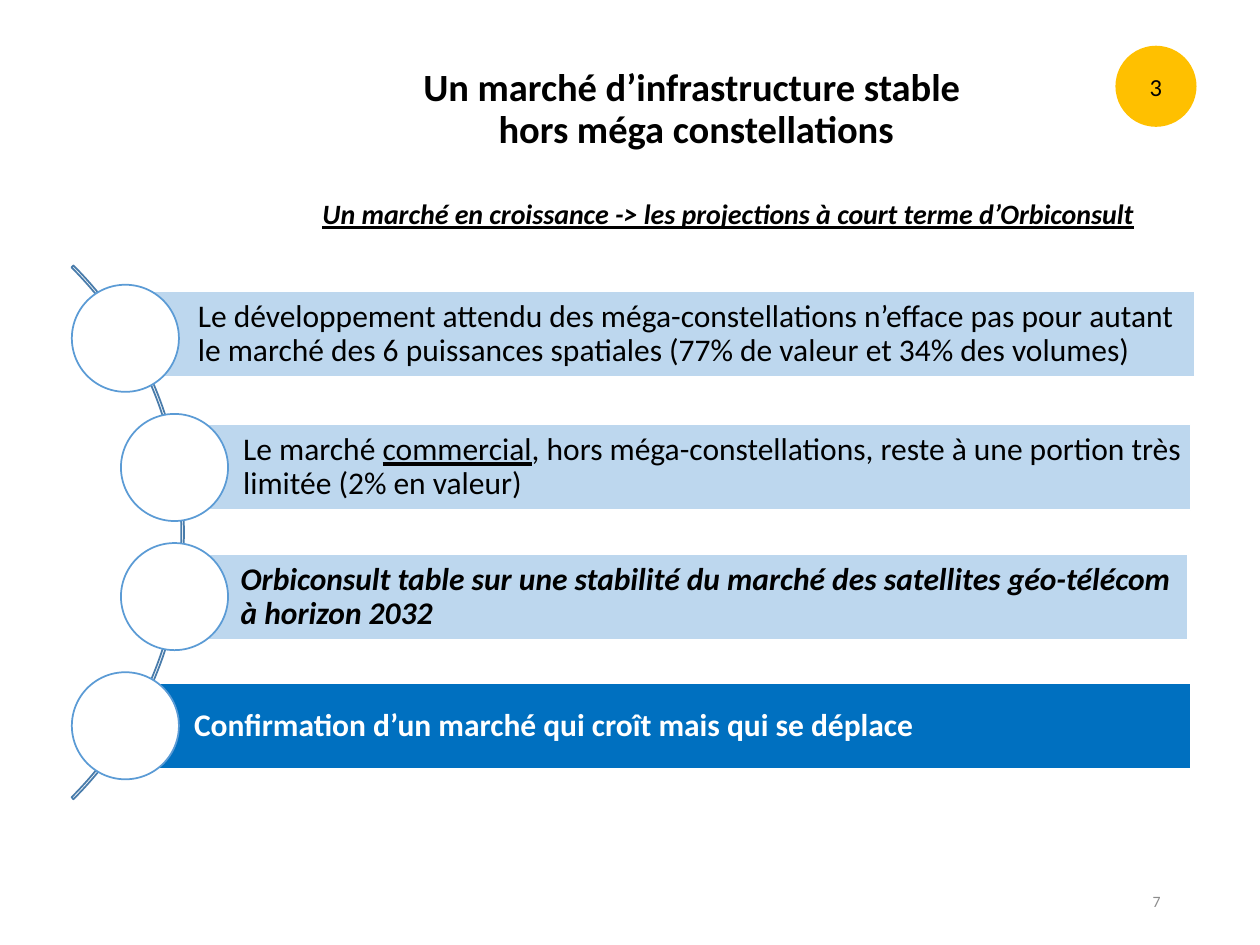
from dataclasses import dataclass

from pptx import Presentation
from pptx.dml.color import RGBColor
from pptx.enum.shapes import MSO_SHAPE as Shape
from pptx.enum.text import MSO_ANCHOR as Anchor, MSO_AUTO_SIZE as AutoSize, PP_ALIGN as Align
from pptx.util import Inches, Pt


@dataclass(frozen=True)
class Theme:
    font: str = "Calibri"
    black: str = "000000"
    white: str = "FFFFFF"
    grey: str = "8C8C8C"
    pale_blue: str = "BDD7EE"
    strong_blue: str = "0070C0"
    ring_blue: str = "5B9BD5"
    arc_blue: str = "497CAB"
    amber: str = "FFC000"
    title_size: int = 22
    bar_size: int = 18
    subtitle_size: int = 16
    badge_size: int = 14
    number_size: int = 9


class SlideBuilder:
    def __init__(self, slide, theme):
        self.slide = slide
        self.theme = theme

    def format(self, p, size, color, bold=False, italic=False, underline=None, align=None):
        f = p.font
        f.name, f.size, f.bold, f.italic = self.theme.font, Pt(size), bold, italic
        f.underline = underline
        f.color.rgb = RGBColor.from_string(color)
        p.alignment = align

    def title(self, box, text):
        sp = self.slide.shapes.title
        sp.left, sp.top, sp.width, sp.height = map(Inches, box)
        tf = sp.text_frame
        tf.auto_size = AutoSize.NONE
        tf.vertical_anchor = Anchor.MIDDLE
        tf.text = text
        p = tf.paragraphs[0]
        p.line_spacing = 0.9
        self.format(p, self.theme.title_size, self.theme.black, bold=True, align=Align.CENTER)

    def text(self, box, text, size, color, anchor=Anchor.TOP, **style):
        tf = self.slide.shapes.add_textbox(*map(Inches, box)).text_frame
        tf.word_wrap = True
        tf.vertical_anchor = anchor
        tf.text = text
        self.format(tf.paragraphs[0], size, color, **style)

    def shape(self, kind, box, line, fill=None):
        sp = self.slide.shapes.add_shape(kind, *map(Inches, box))
        sp.shadow.inherit = False
        if fill:
            sp.fill.solid()
            sp.fill.fore_color.rgb = RGBColor.from_string(fill)
        else:
            sp.fill.background()
        sp.line.color.rgb = RGBColor.from_string(line)
        sp.line.width = Pt(1)
        return sp

    def arc(self, box):
        sp = self.shape(Shape.BLOCK_ARC, box, self.theme.arc_blue)
        # Start and end angles (315° and 45°), then the band thickness
        for i, value in enumerate((189, 27, 0.0036)):
            sp.adjustments[i] = value

    def bar(self, box, runs, fill, color, **style):
        """Draw a bar; runs are (text, underlined) pairs."""
        tf = self.shape(Shape.RECTANGLE, box, self.theme.white, fill).text_frame
        tf.word_wrap = True
        tf.vertical_anchor = Anchor.MIDDLE
        tf.margin_left = Inches(0.54)
        tf.margin_right = tf.margin_top = tf.margin_bottom = Inches(0.05)
        p = tf.paragraphs[0]
        p.line_spacing = 0.9
        self.format(p, self.theme.bar_size, color, align=Align.LEFT, **style)
        for text, underlined in runs:
            r = p.add_run()
            r.text = text
            if underlined:
                r.font.underline = True

    def badge(self, box, text):
        t = self.theme
        tf = self.shape(Shape.FLOWCHART_CONNECTOR, box, t.amber, t.amber).text_frame
        tf.vertical_anchor = Anchor.MIDDLE
        tf.text = text
        self.format(tf.paragraphs[0], t.badge_size, t.black, align=Align.CENTER)


def main():
    prs = Presentation()
    prs.slide_width, prs.slide_height = Inches(10), Inches(7.5)
    t = Theme()
    s = SlideBuilder(prs.slides.add_slide(prs.slide_layouts[5]), t)

    # Heading and page number
    s.title((1.54, 0.15, 7.97, 1.45),
            "Un marché d’infrastructure stable \vhors méga constellations")
    s.text((7.06, 6.95, 2.25, 0.4), "7", t.number_size, t.grey,
           anchor=Anchor.MIDDLE, align=Align.RIGHT)

    # Curved list: arc, then a bar and a circle for each message
    s.arc((-4.53, 1.23, 5.99, 5.99))
    light = dict(fill=t.pale_blue, color=t.black)
    messages = [
        (1.03, 2.31, 8.45, 0.57, light,
         [("Le développement attendu des méga-constellations n’efface pas pour autant "
           "le marché des 6 puissances spatiales (77% de valeur et 34% des volumes)", False)]),
        (1.39, 3.37, 8.06, 0.96, light,
         [("Le marché ", False), ("commercial", True),
          (", hors méga-constellations, reste à une portion très limitée (2% en valeur)", False)]),
        (1.37, 4.4, 8.06, 0.96, dict(light, bold=True, italic=True),
         [("Orbiconsult table sur une stabilité du marché des satellites géo-télécom "
           "à horizon 2032", False)]),
        (1, 5.42, 8.45, 0.57, dict(fill=t.strong_blue, color=t.white, bold=True),
         [("Confirmation d’un marché qui croît mais qui se déplace", False)]),
    ]
    circle_top, circle_step, circle_size = 2.26, 1.025, 0.85
    for i, (left, top, width, circle_left, style, runs) in enumerate(messages):
        s.bar((left, top, width, 0.68), runs, **style)
        s.shape(Shape.OVAL, (circle_left, circle_top + i * circle_step, circle_size, circle_size),
                t.ring_blue, t.white)

    # Subtitle and section badge
    s.text((2.46, 1.51, 6.72, 0.37),
           "Un marché en croissance -> les projections à court terme d’Orbiconsult",
           t.subtitle_size, t.black, bold=True, italic=True, underline=True)
    s.badge((8.86, 0.37, 0.63, 0.63), "3")

    prs.save("out.pptx")


if __name__ == "__main__":
    main()
